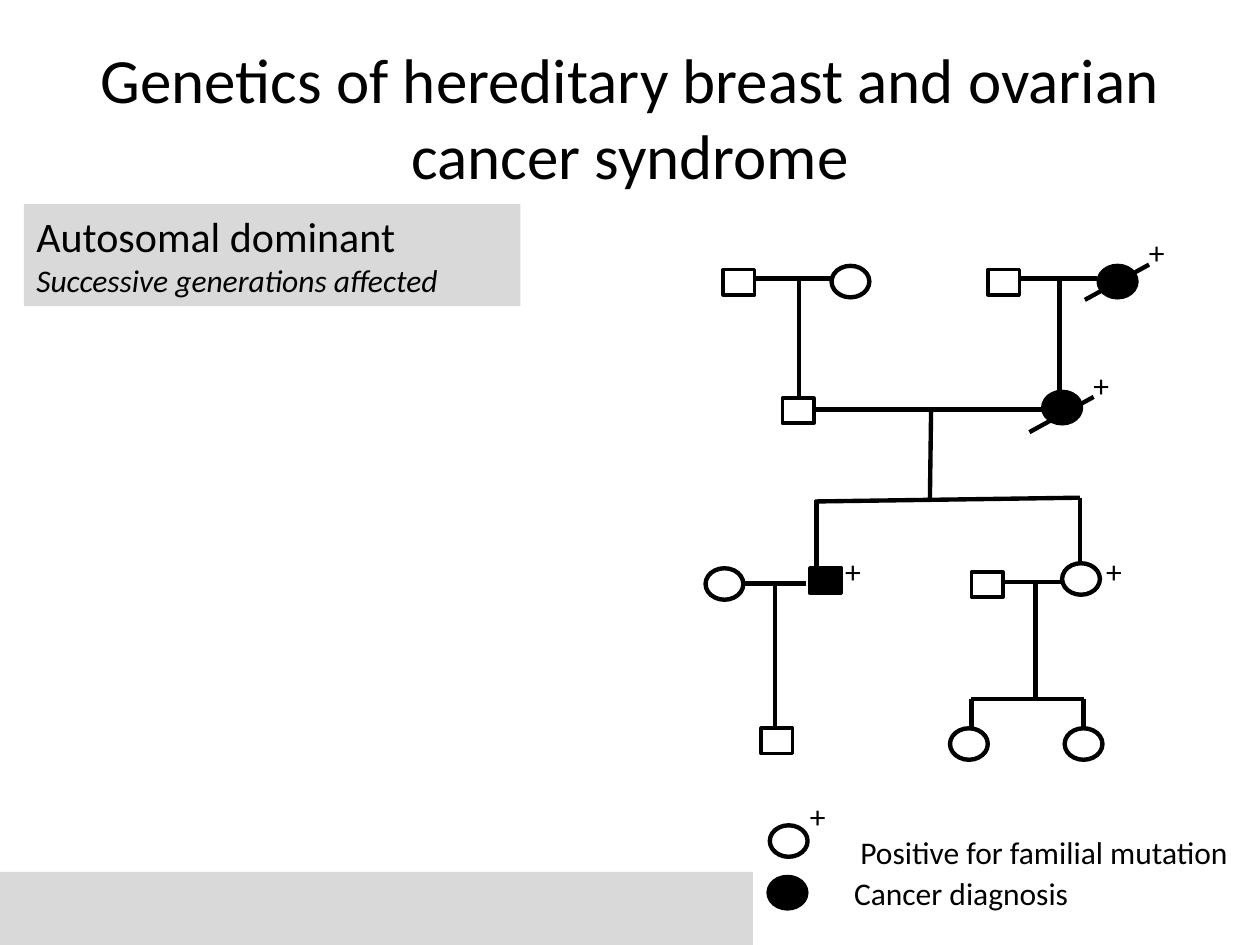
from lxml import etree
from pptx import Presentation
from pptx.dml.color import RGBColor
from pptx.enum import shapes, text
from pptx.oxml.ns import qn
from pptx.util import Inches, Pt

BLACK, WHITE, GREY = "000000", "FFFFFF", "D9D9D9"
SQUARE, CIRCLE = shapes.MSO_SHAPE.RECTANGLE, shapes.MSO_SHAPE.OVAL
SYMBOL_SIZES = {SQUARE: (0.25, 0.2, 2), CIRCLE: (0.3, 0.25, 2.5)}


def color(value):
    return RGBColor.from_string(value)


def add_block(slide, kind, left, top, width, height, fill=None, line=None, weight=2):
    block = slide.shapes.add_shape(
        kind, Inches(left), Inches(top), Inches(width), Inches(height))
    block.shadow.inherit = False
    if fill:
        block.fill.solid()
        block.fill.fore_color.rgb = color(fill)
    else:
        block.fill.background()
    if line:
        block.line.color.rgb = color(line)
        block.line.width = Pt(weight)
    else:
        block.line.fill.background()
    return block


def add_symbol(slide, kind, left, top, fill=None):
    width, height, weight = SYMBOL_SIZES[kind]
    add_block(slide, kind, left, top, width, height, fill, BLACK, weight)


def add_line(slide, x1, y1, x2, y2):
    line = slide.shapes.add_connector(
        shapes.MSO_CONNECTOR.STRAIGHT, Inches(x1), Inches(y1), Inches(x2), Inches(y2))
    line.line.color.rgb = color(BLACK)
    line.line.width = Pt(2.5)
    etree.SubElement(line._element.spPr, qn("a:effectLst"))


def write(frame, lines, align=text.PP_ALIGN.LEFT, anchor=text.MSO_ANCHOR.TOP):
    frame.word_wrap = True
    frame.vertical_anchor = anchor
    for index, (words, size, italic) in enumerate(lines):
        paragraph = frame.add_paragraph() if index else frame.paragraphs[0]
        paragraph.text = words
        paragraph.alignment = align
        paragraph.font.name = "Calibri"
        paragraph.font.size = Pt(size)
        paragraph.font.italic = italic
        paragraph.font.color.rgb = color(BLACK)


def add_label(slide, words, left, top, width, height=0.4, size=18, **layout):
    label = slide.shapes.add_textbox(
        Inches(left), Inches(top), Inches(width), Inches(height))
    write(label.text_frame, [(words, size, False)], **layout)


def add_plus(slide, left, top):
    add_label(slide, "+", left, top, 0.44)


def add_title(slide, left, top, width, height):
    add_label(slide, "Genetics of hereditary breast and ovarian cancer syndrome",
              left, top, width, height, 36,
              align=text.PP_ALIGN.CENTER, anchor=text.MSO_ANCHOR.MIDDLE)


def add_inheritance(slide, left, top, width, height):
    panel = add_block(slide, SQUARE, left, top, width, height, GREY)
    write(panel.text_frame, [("Autosomal dominant", 24, False),
                             ("Successive generations affected", 18, True)])


def add_pedigree(slide, left, top):
    marriages = [(0.39, 0.41, 1, 0.41), (2.5, 0.41, 3.11, 0.41),
                 (0.87, 1.45, 2.68, 1.45),
                 (0.29, 2.83, 0.8, 2.83), (2.36, 2.82, 2.87, 2.82)]
    descents = [(0.74, 0.41, 0.74, 1.35), (2.81, 0.41, 2.81, 1.34),
                (1.79, 1.45, 1.78, 2.18), (0.55, 2.83, 0.55, 3.98),
                (2.62, 2.82, 2.62, 3.75)]
    siblings = [(0.87, 2.18, 2.97, 2.15), (0.88, 2.17, 0.88, 2.71),
                (2.97, 2.15, 2.97, 2.69), (2.11, 3.75, 3, 3.75),
                (2.11, 3.75, 2.11, 3.99), (3, 3.75, 3, 3.99)]
    people = [
        (SQUARE, 0.14, 0.34, None), (CIRCLE, 1, 0.31, None),
        (SQUARE, 2.24, 0.34, None), (CIRCLE, 3.12, 0.31, BLACK),
        (SQUARE, 0.61, 1.36, None), (CIRCLE, 2.68, 1.31, BLACK),
        (CIRCLE, 0, 2.71, WHITE), (SQUARE, 0.83, 2.71, BLACK),
        (SQUARE, 2.11, 2.74, None), (CIRCLE, 2.83, 2.67, WHITE),
        (SQUARE, 0.44, 3.98, None), (CIRCLE, 1.94, 3.98, None),
        (CIRCLE, 2.85, 3.98, None),
    ]
    deceased = [(3.01, 0.58), (2.57, 1.63)]
    carriers = [(3.42, 0), (2.98, 1.06), (1.01, 2.53), (3.08, 2.53)]

    slashes = [(x, y, x + 0.51, y - 0.28) for x, y in deceased]
    for x1, y1, x2, y2 in marriages + descents + siblings + slashes:
        add_line(slide, left + x1, top + y1, left + x2, top + y2)
    for kind, x, y, fill in people:
        add_symbol(slide, kind, left + x, top + y, fill)
    for x, y in carriers:
        add_plus(slide, left + x, top + y)


def add_legend(slide, left, top, width, height):
    add_block(slide, SQUARE, left, top, width, height, WHITE, WHITE)
    add_plus(slide, left + 0.34, top + 0.09)
    entries = [("Positive for familial mutation", WHITE, 0.12, 0.36, 0.74, 0.37),
               ("Cancer diagnosis", BLACK, 0.11, 0.77, 0.69, 0.7)]
    for words, fill, symbol_x, symbol_y, label_x, label_y in entries:
        add_symbol(slide, CIRCLE, left + symbol_x, top + symbol_y, fill)
        add_label(slide, words, left + label_x, top + label_y, 3.15)


def main():
    deck = Presentation()
    deck.slide_width, deck.slide_height = Inches(10), Inches(7.5)
    slide = deck.slides.add_slide(deck.slide_layouts[6])
    add_block(slide, SQUARE, 0, 6.92, 6, 0.58, GREY)
    add_title(slide, 0.5, 0.3, 9, 1.25)
    add_inheritance(slide, 0.19, 1.62, 3.94, 0.81)
    add_pedigree(slide, 5.6, 1.8)
    add_legend(slide, 5.99, 6.19, 4.28, 1.31)
    deck.save("out.pptx")


if __name__ == "__main__":
    main()
